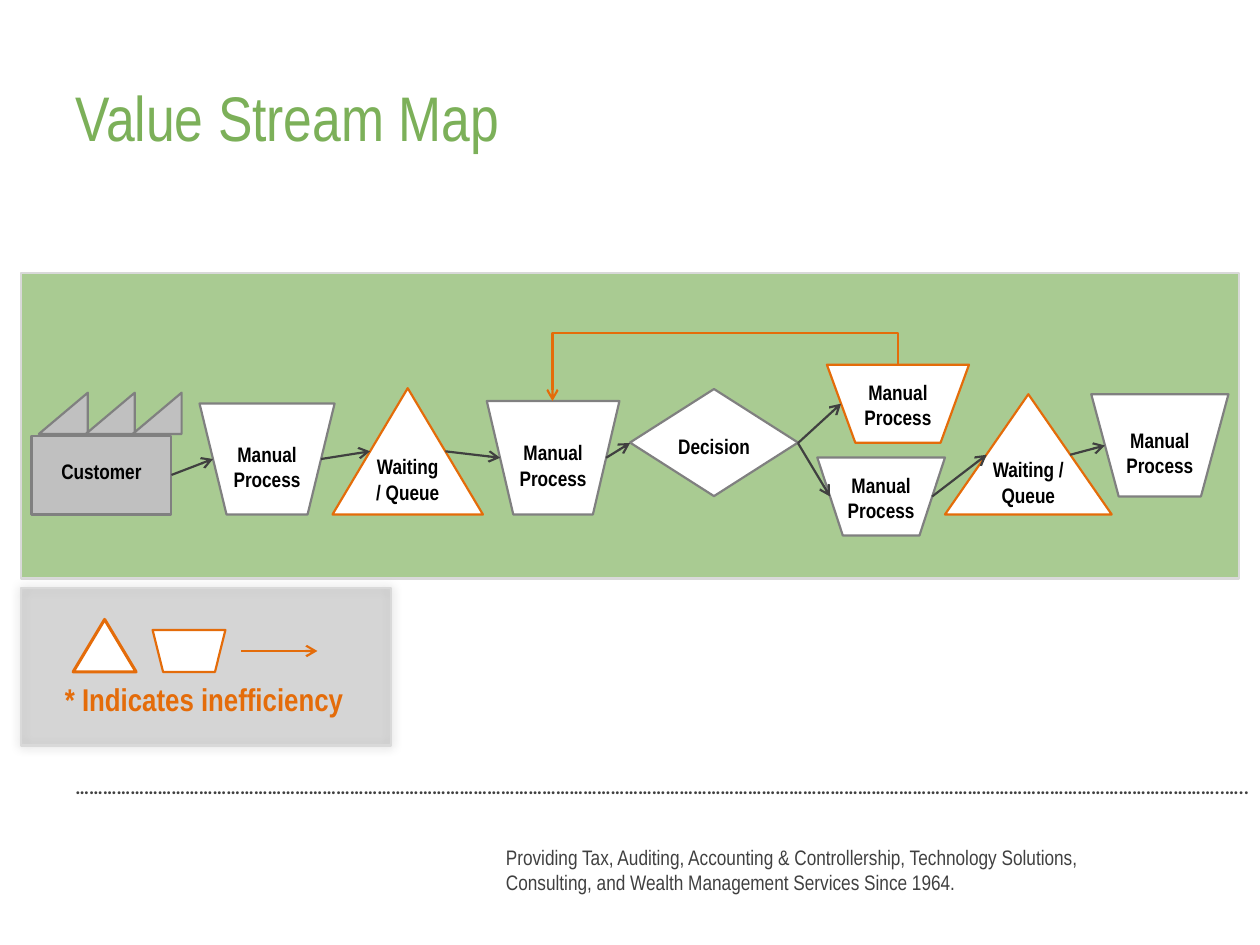
from dataclasses import dataclass

from lxml import etree
from pptx import Presentation
from pptx.dml.color import RGBColor
from pptx.enum.shapes import MSO_CONNECTOR, MSO_SHAPE
from pptx.enum.text import MSO_ANCHOR, PP_ALIGN
from pptx.oxml.ns import qn
from pptx.util import Pt

TOP, MIDDLE = MSO_ANCHOR.TOP, MSO_ANCHOR.MIDDLE
LEFT, CENTER = PP_ALIGN.LEFT, PP_ALIGN.CENTER
STRAIGHT, ELBOW = MSO_CONNECTOR.STRAIGHT, MSO_CONNECTOR.ELBOW
RECT, RIGHT_TRIANGLE = MSO_SHAPE.RECTANGLE, MSO_SHAPE.RIGHT_TRIANGLE
DECISION = MSO_SHAPE.FLOWCHART_DECISION
QUEUE = MSO_SHAPE.FLOWCHART_EXTRACT
PROCESS = MSO_SHAPE.FLOWCHART_MANUAL_OPERATION
TRIANGLE, TRAPEZOID = MSO_SHAPE.ISOSCELES_TRIANGLE, MSO_SHAPE.TRAPEZOID

COLORS = {
    "green": "7CB059", "gray": "808080", "silver": "C0C0C0", "border": "D9D9D9",
    "orange": "E46C0A", "dark": "404040", "white": "FFFFFF", "black": "000000",
}
FONT = "Arial Narrow"


@dataclass
class Shape:
    kind: int
    box: tuple[float, float, float, float]
    line: str = "gray"
    fill: str = "white"
    text: str = ""
    top_inset: float = 1.5
    anchor: MSO_ANCHOR = TOP
    rotation: float = 0
    weight: float = 1.25
    opacity: int = 100


@dataclass
class Arrow:
    start: tuple[float, float]
    end: tuple[float, float]
    color: str = "dark"


@dataclass
class Label:
    text: str
    box: tuple[float, float, float, float]
    size: float
    color: str
    bold: bool = False
    anchor: MSO_ANCHOR = TOP
    font: str = FONT
    wrap: bool = True


def rgb(name: str) -> RGBColor:
    return RGBColor.from_string(COLORS[name])


def write(tf, text: str, size: float, color: str, bold: bool, align, font: str = FONT) -> None:
    p = tf.paragraphs[0]
    p.text = text
    p.alignment = align
    p.font.name, p.font.size, p.font.bold = font, Pt(size), bold
    p.font.color.rgb = rgb(color)


def add_alpha(parent, percent: int) -> None:
    etree.SubElement(parent, qn("a:alpha"), val=str(percent * 1000))


def draw_shape(s, item: Shape):
    sp = s.shapes.add_shape(item.kind, *map(Pt, item.box))
    sp.shadow.inherit = False
    sp.rotation = item.rotation
    sp.fill.solid()
    sp.fill.fore_color.rgb = rgb(item.fill)
    if item.opacity < 100:
        add_alpha(sp._element.spPr.find(f".//{qn('a:srgbClr')}"), item.opacity)
    sp.line.color.rgb = rgb(item.line)
    sp.line.width = Pt(item.weight)
    if item.text:
        tf = sp.text_frame
        tf.word_wrap = True
        tf.vertical_anchor = item.anchor
        tf.margin_left = tf.margin_right = Pt(2)
        tf.margin_top, tf.margin_bottom = Pt(item.top_inset), 0
        write(tf, item.text, 12, "black", True, CENTER)
    return sp


def draw_arrow(s, item: Arrow, kind=STRAIGHT):
    cx = s.shapes.add_connector(kind, *map(Pt, item.start + item.end))
    cx.line.color.rgb = rgb(item.color)
    cx.line.width = Pt(1.25)
    etree.SubElement(cx.line._get_or_add_ln(), qn("a:tailEnd"), type="arrow")
    etree.SubElement(cx._element.spPr, qn("a:effectLst"))
    return cx


def draw_rework_loop(s) -> None:
    """Elbow turned by 270 degrees, from the rework process back up and over."""
    cx = draw_arrow(s, Arrow((424.85, 317.35), (403.95, 120.05), "orange"), ELBOW)
    sp_pr = cx._element.spPr
    sp_pr.find(qn("a:xfrm")).set("rot", "16200000")
    geometry = sp_pr.find(qn("a:prstGeom"))
    guides = geometry.find(qn("a:avLst"))
    if guides is None:
        guides = etree.SubElement(geometry, qn("a:avLst"))
    etree.SubElement(guides, qn("a:gd"), name="adj1", fmla="val -86700")


def add_glow_shadow(sp) -> None:
    effects = sp._element.spPr.find(qn("a:effectLst"))
    shadow = etree.SubElement(effects, qn("a:outerShdw"), blurRad=str(Pt(6)),
                              dist="0", dir="18900000", algn="ctr", rotWithShape="0")
    add_alpha(etree.SubElement(shadow, qn("a:srgbClr"), val=COLORS["black"]), 20)


def draw_label(s, item: Label) -> None:
    tf = s.shapes.add_textbox(*map(Pt, item.box)).text_frame
    tf.word_wrap = item.wrap
    tf.vertical_anchor = item.anchor
    write(tf, item.text, item.size, item.color, item.bold, LEFT, item.font)


MAP_PANEL = Shape(RECT, (12, 156, 696, 174.5), "border", "green", weight=1.5, opacity=65)
LEGEND_PANEL = Shape(RECT, (12, 336, 211.5, 90), "border", "gray", weight=1.5, opacity=25)

STEPS = [
    Shape(DECISION, (360, 222.3, 96, 61.2), text="Decision", top_inset=10),
    Shape(QUEUE, (540, 225.3, 95.3, 68.7), "orange", text="Waiting / Queue"),
    Shape(QUEUE, (190, 221.8, 86, 72.2), "orange", text="Waiting / Queue"),
]
STEPS += [
    Shape(PROCESS, box, line, text="Manual Process", top_inset=8.5, anchor=anchor)
    for box, line, anchor in [
        ((623.6, 225.3, 78.4, 58.4), "gray", MIDDLE),
        ((467, 261.4, 73, 44.6), "gray", TOP),
        ((472.5, 208.4, 81.2, 44.6), "orange", TOP),
        ((278.2, 229.2, 75.8, 64.8), "gray", MIDDLE),
        ((114, 230.6, 77.2, 63.4), "gray", MIDDLE),
    ]
]
ROOF_LEFT, ROOF_STEP = 24.4, 26.8
FACTORY = [Shape(RECT, (18, 249, 80, 45), fill="silver", text="Customer", top_inset=13.3)]
FACTORY += [
    Shape(RIGHT_TRIANGLE, (ROOF_LEFT + i * ROOF_STEP, 222.2, 23.6, 28),
          fill="silver", rotation=270)
    for i in range(3)
]
LEGEND = [
    Shape(TRIANGLE, (41.8, 354, 36, 30), "orange", weight=1.75),
    Shape(TRAPEZOID, (87.2, 360, 41.6, 24), "orange", rotation=180),
]
ARROWS = [
    Arrow((98, 271.4), (121.7, 262.3)),
    Arrow((183.5, 262.3), (211.5, 257.9)),
    Arrow((254.5, 257.9), (285.8, 261.6)),
    Arrow((346.4, 261.6), (360, 253.2)),
    Arrow((456, 253.2), (480.6, 230.7)),
    Arrow((456, 253.2), (474.3, 283.7)),
    Arrow((532.7, 283.7), (563.8, 259.9)),
    Arrow((611.5, 259.9), (631.4, 254.6)),
    Arrow((138, 372), (181.4, 372), "orange"),
]
LABELS = [
    Label("Value Stream Map", (36, 21.6, 648, 90), 36, "green", anchor=MIDDLE),
    Label("* Indicates inefficiency", (30, 385.2, 357, 29), 18, "orange", True),
    Label("Providing Tax, Auditing, Accounting & Controllership, Technology Solutions, "
          "Consulting, and Wealth Management Services Since 1964.",
          (282, 470.2, 372, 53.3), 12, "dark", anchor=MIDDLE),
    Label("…" * 83 + "..…..", (36, 439.2, 696, 21), 11, "dark", True,
          font="Calibri", wrap=False),
]


def main() -> None:
    prs = Presentation()
    prs.slide_width, prs.slide_height = Pt(720), Pt(540)
    s = prs.slides.add_slide(prs.slide_layouts[6])
    draw_shape(s, MAP_PANEL)
    add_glow_shadow(draw_shape(s, LEGEND_PANEL))
    for item in STEPS + FACTORY + LEGEND:
        draw_shape(s, item)
    for arrow in ARROWS:
        draw_arrow(s, arrow)
    draw_rework_loop(s)
    for label in LABELS:
        draw_label(s, label)
    prs.save("out.pptx")


if __name__ == "__main__":
    main()
